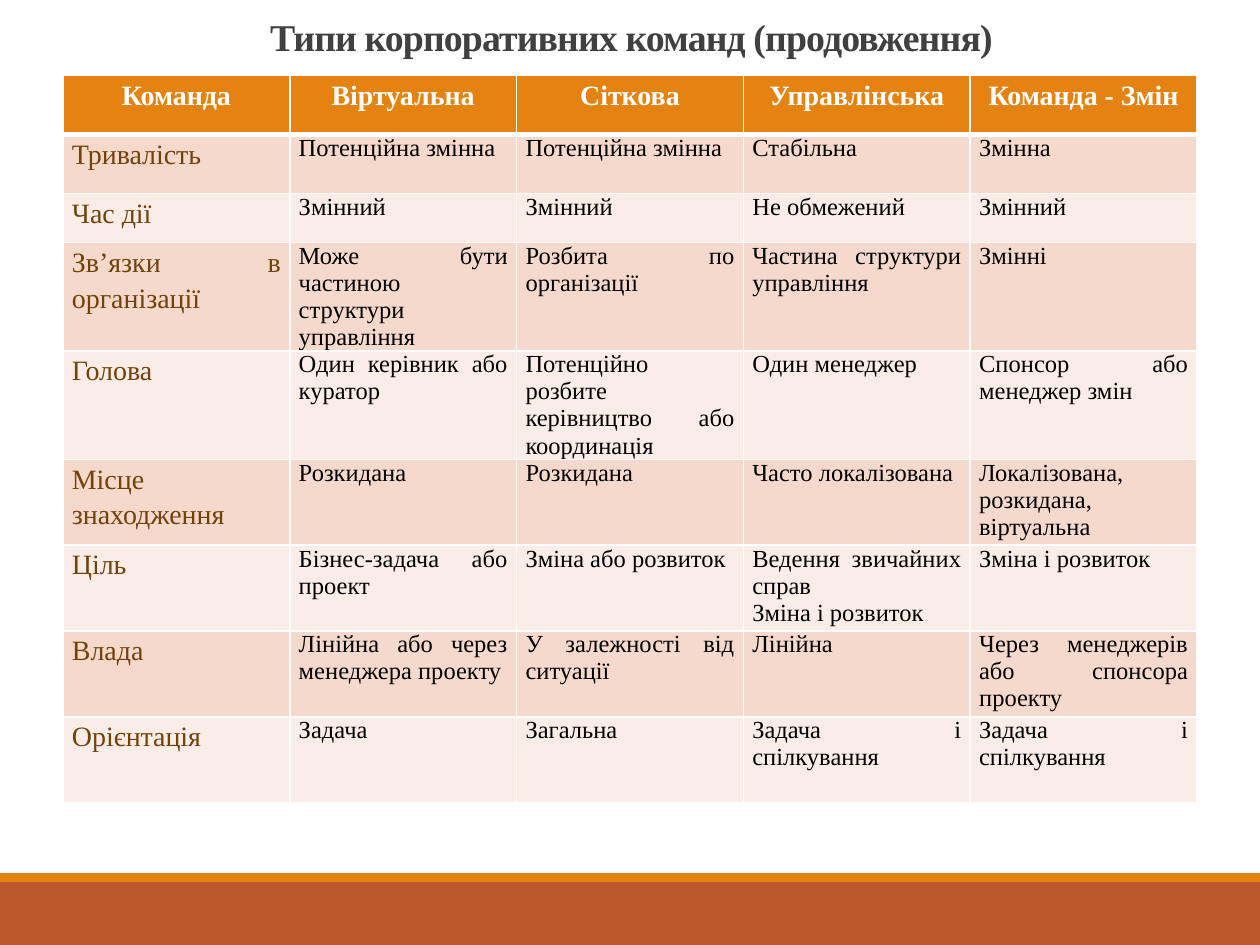
from lxml import etree
from pptx import Presentation
from pptx.dml.color import RGBColor
from pptx.enum.shapes import MSO_SHAPE
from pptx.enum.text import MSO_ANCHOR, MSO_AUTO_SIZE, PP_ALIGN as ALIGN
from pptx.oxml.ns import qn
from pptx.util import Cm, Pt

WHITE = RGBColor(0xFF, 0xFF, 0xFF)
BLACK = RGBColor(0, 0, 0)
GREY = RGBColor(0x40, 0x40, 0x40)
ORANGE = RGBColor(0xE4, 0x83, 0x12)
RUST = RGBColor(0xBD, 0x58, 0x2C)
BROWN = RGBColor(0x72, 0x42, 0x09)
BANDS = [RGBColor(0xF5, 0xD9, 0xCC), RGBColor(0xFA, 0xED, 0xE7)]
FONT = "Times New Roman"

# Paragraph and font values for each kind of text
TITLE = (dict(alignment=ALIGN.CENTER, line_spacing=0.85),
         dict(name=FONT, size=Pt(21.6), bold=True))
HEADER = (dict(alignment=ALIGN.CENTER, line_spacing=1.15),
          dict(name=FONT, size=Pt(16), bold=True))
LABEL = (dict(alignment=ALIGN.JUSTIFY, line_spacing=1.15),
         dict(name=FONT, size=Pt(16), bold=False))
BODY = (dict(alignment=ALIGN.JUSTIFY, line_spacing=1.0),
        dict(name=FONT, size=Pt(14), bold=False))

ROWS = [
    ["Команда", "Віртуальна", "Сіткова", "Управлінська", "Команда - Змін"],
    ["Тривалість", "Потенційна змінна", "Потенційна змінна", "Стабільна",
     "Змінна"],
    ["Час дії", "Змінний", "Змінний", "Не обмежений", "Змінний"],
    ["Зв’язки в організації", "Може бути частиною структури управління",
     "Розбита по організації", "Частина структури управління", "Змінні"],
    ["Голова", "Один керівник або куратор",
     "Потенційно розбите керівництво або координація", "Один менеджер",
     "Спонсор або менеджер змін"],
    ["Місце знаходження", "Розкидана", "Розкидана", "Часто локалізована",
     "Локалізована, розкидана, віртуальна"],
    ["Ціль", "Бізнес-задача або проект", "Зміна або розвиток",
     "Ведення звичайних справ\nЗміна і розвиток", "Зміна і розвиток"],
    ["Влада", "Лінійна або через менеджера проекту",
     "У залежності від ситуації", "Лінійна",
     "Через менеджерів або спонсора проекту"],
    ["Орієнтація", "Задача", "Загальна", "Задача і спілкування",
     "Задача і спілкування"],
]
ROW_HEIGHTS = [1.19, 1.19, 0.99] + [1.73] * 6


def set_all(obj, values):
    for name, value in values.items():
        setattr(obj, name, value)


def write(tf, text, style, color):
    para_values, font_values = style
    tf.text = text
    for p in tf.paragraphs:
        set_all(p, para_values)
        for r in p.runs:
            set_all(r.font, font_values)
            r.font.color.rgb = color


def add_borders(cell, widths):
    tc_pr = cell._tc.get_or_add_tcPr()
    for side, width in widths.items():
        ln = etree.SubElement(tc_pr, qn(f"a:ln{side}"), w=str(Pt(width)))
        fill = etree.SubElement(ln, qn("a:solidFill"))
        etree.SubElement(fill, qn("a:srgbClr"), val=str(WHITE))


def add_title(s, left, top, width, height):
    sp = s.shapes.title
    set_all(sp, dict(left=Cm(left), top=Cm(top),
                     width=Cm(width), height=Cm(height)))
    tf = sp.text_frame
    write(tf, "Типи корпоративних команд (продовження)", TITLE, GREY)
    set_all(tf, dict(vertical_anchor=MSO_ANCHOR.BOTTOM, word_wrap=True,
                     auto_size=MSO_AUTO_SIZE.NONE))
    for r in tf.paragraphs[0].runs:
        r._r.get_or_add_rPr().set("spc", "-50")


def add_footer(s, left, top, width, height):
    stripe = 0.18
    # Thin stripe above the wide band
    for y, h, color in [(top + stripe, height - stripe, RUST),
                        (top, stripe, ORANGE)]:
        sp = s.shapes.add_shape(MSO_SHAPE.RECTANGLE, Cm(left), Cm(y),
                                Cm(width), Cm(h))
        sp.shadow.inherit = False
        sp.fill.solid()
        sp.fill.fore_color.rgb = color
        sp.line.fill.background()


def add_team_table(s, left, top, width):
    n_cols = len(ROWS[0])
    table = s.shapes.add_table(len(ROWS), n_cols, Cm(left), Cm(top), Cm(width),
                               Cm(sum(ROW_HEIGHTS))).table
    for col in table.columns:
        col.width = Cm(width / n_cols)
    for i, (texts, height) in enumerate(zip(ROWS, ROW_HEIGHTS)):
        table.rows[i].height = Cm(height)
        for j, text in enumerate(texts):
            cell = table.cell(i, j)
            if i == 0:
                style, color, fill = HEADER, WHITE, ORANGE
            else:
                style, color = (BODY, BLACK) if j else (LABEL, BROWN)
                fill = BANDS[(i - 1) % 2]
            set_all(cell, dict(margin_left=Cm(0.18), margin_right=Cm(0.18),
                               margin_top=0, margin_bottom=0))
            write(cell.text_frame, text, style, color)
            # The rule below the header is thicker
            add_borders(cell, dict(L=1, R=1, T=3 if i == 1 else 1,
                                   B=3 if i == 0 else 1))
            cell.fill.solid()
            cell.fill.fore_color.rgb = fill


def main():
    prs = Presentation()
    prs.slide_width, prs.slide_height = Cm(25.4), Cm(19.05)
    s = prs.slides.add_slide(prs.slide_layouts[5])
    add_footer(s, 0, 17.6, 25.4, 1.45)
    add_title(s, 1.3, 0.53, 22.86, 0.79)
    add_team_table(s, 1.27, 1.52, 22.86)
    prs.save("out.pptx")


if __name__ == "__main__":
    main()
